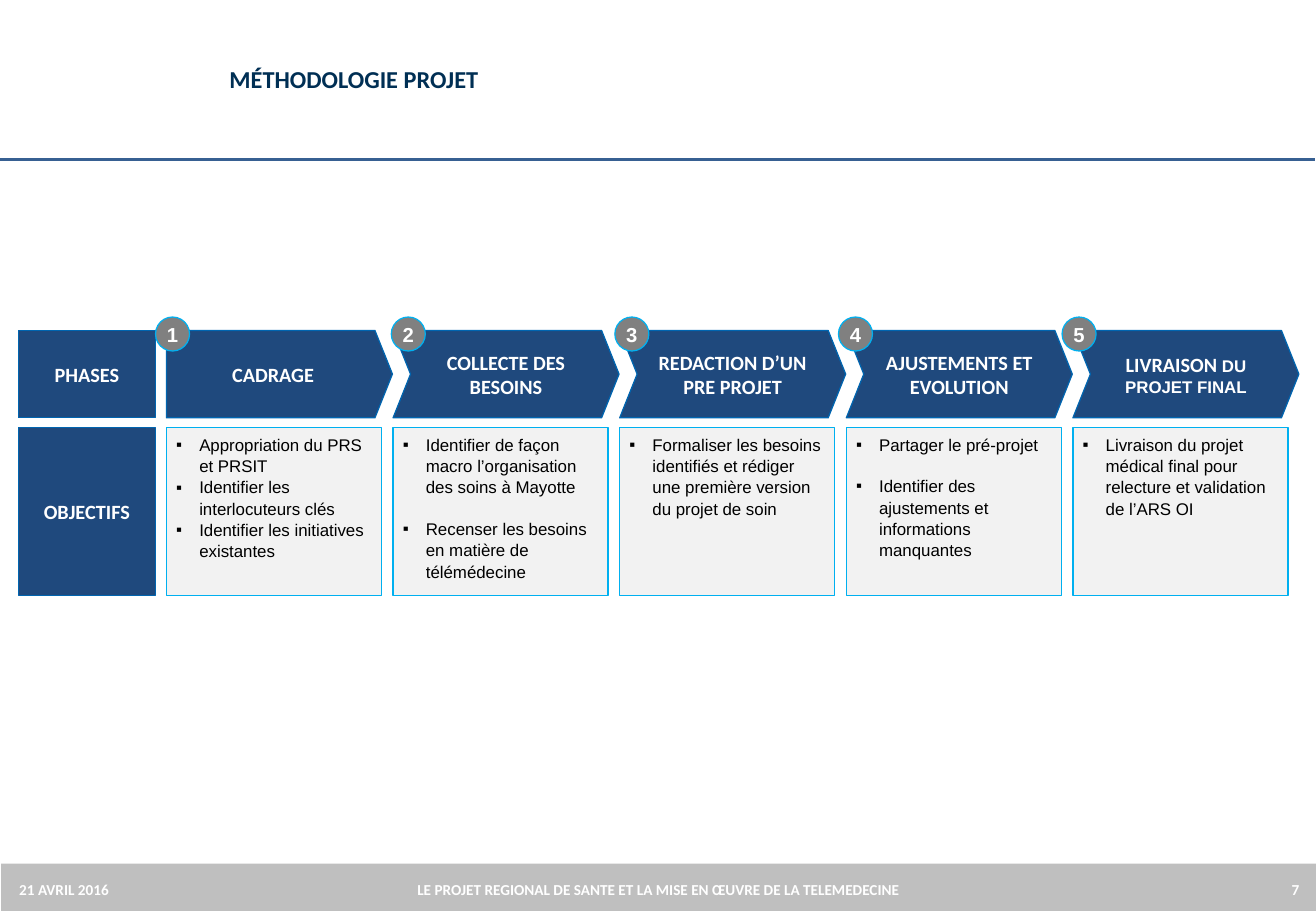
from dataclasses import dataclass

from lxml import etree
from pptx import Presentation, util as u
from pptx.dml.color import RGBColor
from pptx.enum import shapes, text
from pptx.oxml.ns import qn

NAVY, BLUE, CYAN = "1F497D", "0065B0", "00B0F0"
GREY, PALE, WHITE = "808080", "F2F2F2", "FFFFFF"
SILVER, RULE, INK, BLACK = "BFBFBF", "376092", "002F54", "000000"
LEFT, CENTER, RIGHT = text.PP_ALIGN.LEFT, text.PP_ALIGN.CENTER, text.PP_ALIGN.RIGHT
MIDDLE, TOP = text.MSO_ANCHOR.MIDDLE, text.MSO_ANCHOR.TOP
GEO = shapes.MSO_SHAPE

HEADING = dict(size=u.Pt(12), name="Calibri", bold=True)
NUMBER = dict(size=u.Pt(12), name="Arial", bold=True)
SMALL_HEADING = dict(size=u.Pt(10), name="Arial", bold=True)
BODY = dict(size=u.Pt(10), name="Arial", bold=False)
FOOTER = dict(size=u.Pt(9), name="Calibri", bold=True)
TITLE = dict(size=u.Pt(18), name="Calibri", bold=True)

PHASE_LEFT, PHASE_STEP, PHASE_WIDTH = 1.37, 1.865, 1.86
PHASE_TOP, PHASE_HEIGHT = 2.72, 0.72
GOAL_TOP, GOAL_WIDTH, GOAL_HEIGHT = 3.52, 1.77, 1.38
LABEL_LEFT, LABEL_WIDTH = 0.15, 1.13
BADGE_TOP, BADGE_SIZE = 2.61, 0.28
TIGHT = (0.04, 0.04)


@dataclass
class Phase:
    name: str
    badge_left: float
    goals: list[str]
    gap: float = 0  # points between goals
    small_name: str = ""


@dataclass
class Label:
    name: str
    top: float
    height: float


@dataclass
class FooterText:
    words: str
    left: float
    width: float
    align: text.PP_ALIGN


PHASES = [
    Phase("CADRAGE", 1.28, ["Appropriation du PRS et PRSIT",
                            "Identifier les interlocuteurs clés",
                            "Identifier les initiatives existantes"]),
    Phase("COLLECTE DES BESOINS", 3.22,
          ["Identifier de façon macro l’organisation des soins à Mayotte",
           "Recenser les besoins en matière de télémédecine"], 12),
    Phase("REDACTION D’UN PRE PROJET", 5.06,
          ["Formaliser les besoins identifiés et rédiger une première version "
           "du projet de soin"]),
    Phase("AJUSTEMENTS ET EVOLUTION", 6.9,
          ["Partager le pré-projet",
           "Identifier des ajustements et informations manquantes"], 12),
    Phase("LIVRAISON", 8.74,
          ["Livraison du projet médical final pour relecture et validation "
           "de l’ARS OI"], small_name=" DU PROJET FINAL"),
]
LABELS = [Label("PHASES", PHASE_TOP, PHASE_HEIGHT),
          Label("OBJECTIFS", GOAL_TOP, GOAL_HEIGHT)]
FOOTERS = [
    FooterText("21 AVRIL 2016", 0.06, 1.88, LEFT),
    FooterText("LE PROJET REGIONAL DE SANTE ET LA MISE EN ŒUVRE DE LA TELEMEDECINE",
               2.45, 5.93, CENTER),
    FooterText("7", 10.24, 0.55, RIGHT),
]


def rgb(color: str) -> RGBColor:
    return RGBColor.from_string(color)


def box(left: float, top: float, width: float, height: float) -> list[u.Length]:
    return [u.Inches(v) for v in (left, top, width, height)]


def add_box(slide, kind, bounds, fill: str, line: str = ""):
    sp = slide.shapes.add_shape(kind, *bounds)
    sp.shadow.inherit = False
    sp.fill.solid()
    sp.fill.fore_color.rgb = rgb(fill)
    if line:
        sp.line.color.rgb = rgb(line)
        sp.line.width = u.Pt(0.75)
    else:
        sp.line.fill.background()
    return sp


def set_frame(sp, anchor=MIDDLE, insets=(0.1, 0.05), wrap=True):
    """Set up the text frame; insets are (sides, top and bottom)."""
    tf = sp.text_frame
    side, edge = (u.Inches(v) for v in insets)
    frame = dict(word_wrap=wrap, vertical_anchor=anchor, margin_left=side,
                 margin_right=side, margin_top=edge, margin_bottom=edge)
    for key, value in frame.items():
        setattr(tf, key, value)
    return tf


def add_run(p, words: str, style: dict, color: str):
    r = p.add_run()
    r.text = words
    for key, value in style.items():
        setattr(r.font, key, value)
    r.font.color.rgb = rgb(color)
    return r


def write_line(tf, words: str, style: dict, color: str = WHITE, align=CENTER):
    p = tf.paragraphs[0]
    p.alignment = align
    return add_run(p, words, style, color)


def set_indent(p, left: float, first: float = 0) -> None:
    pPr = p._p.get_or_add_pPr()
    pPr.set("marL", str(u.Inches(left)))
    pPr.set("indent", str(u.Inches(first)))


def write_goals(tf, phase: Phase) -> None:
    for i, goal in enumerate(phase.goals):
        p = tf.add_paragraph() if i else tf.paragraphs[0]
        p.alignment = LEFT
        p.line_spacing = 1.05
        if i and phase.gap:
            p.space_before = u.Pt(phase.gap)
        set_indent(p, 0.19, -0.19)
        pPr = p._p.get_or_add_pPr()
        etree.SubElement(pPr, qn("a:buFont")).set("typeface", "Arial")
        etree.SubElement(pPr, qn("a:buChar")).set("char", "▪")
        add_run(p, goal, BODY, BLACK)


def add_phase(slide, index: int, phase: Phase) -> None:
    """Draw the arrow, its number and the goals below it."""
    left = PHASE_LEFT + index * PHASE_STEP
    arrow = add_box(slide, GEO.CHEVRON if index else GEO.PENTAGON,
                    box(left, PHASE_TOP, PHASE_WIDTH, PHASE_HEIGHT), NAVY, BLUE)
    arrow.adjustments[0] = 0.2
    tf = set_frame(arrow, insets=TIGHT)
    write_line(tf, phase.name, HEADING, align=CENTER if index else LEFT)
    if not index:
        set_indent(tf.paragraphs[0], 0.5)
    if phase.small_name:
        add_run(tf.paragraphs[0], phase.small_name, SMALL_HEADING, WHITE)

    badge = add_box(slide, GEO.OVAL,
                    box(phase.badge_left, BADGE_TOP, BADGE_SIZE, BADGE_SIZE), GREY, CYAN)
    write_line(set_frame(badge, wrap=False), str(index + 1), NUMBER)

    goals = add_box(slide, GEO.RECTANGLE,
                    box(left, GOAL_TOP, GOAL_WIDTH, GOAL_HEIGHT), PALE, CYAN)
    write_goals(set_frame(goals, TOP, (0.08, 0.05)), phase)


def main() -> None:
    prs = Presentation()
    prs.slide_width, prs.slide_height = u.Inches(10.83), u.Inches(7.5)
    slide = prs.slides.add_slide(prs.slide_layouts[6])

    add_box(slide, GEO.RECTANGLE, box(0.01, 7.11, 10.83, 0.42), SILVER)
    rule = slide.shapes.add_connector(shapes.MSO_CONNECTOR.STRAIGHT,
                                      *box(0, 1.31, 10.82, 1.31))
    rule.line.color.rgb = rgb(RULE)
    rule.line.width = u.Pt(1.75)
    etree.SubElement(rule._element.spPr, qn("a:effectLst"))

    title = slide.shapes.add_textbox(*box(1.79, 0.13, 8.51, 1))
    r = write_line(set_frame(title), "méthodologie projet", TITLE, INK, LEFT)
    r._r.get_or_add_rPr().set("cap", "small")

    for label in LABELS:
        sp = add_box(slide, GEO.RECTANGLE,
                     box(LABEL_LEFT, label.top, LABEL_WIDTH, label.height), NAVY, BLUE)
        write_line(set_frame(sp, insets=TIGHT), label.name, HEADING)
    for index, phase in enumerate(PHASES):
        add_phase(slide, index, phase)
    for footer in FOOTERS:
        sp = slide.shapes.add_textbox(*box(footer.left, 7.14, footer.width, 0.36))
        write_line(set_frame(sp), footer.words, FOOTER, align=footer.align)

    prs.save("out.pptx")


if __name__ == "__main__":
    main()
